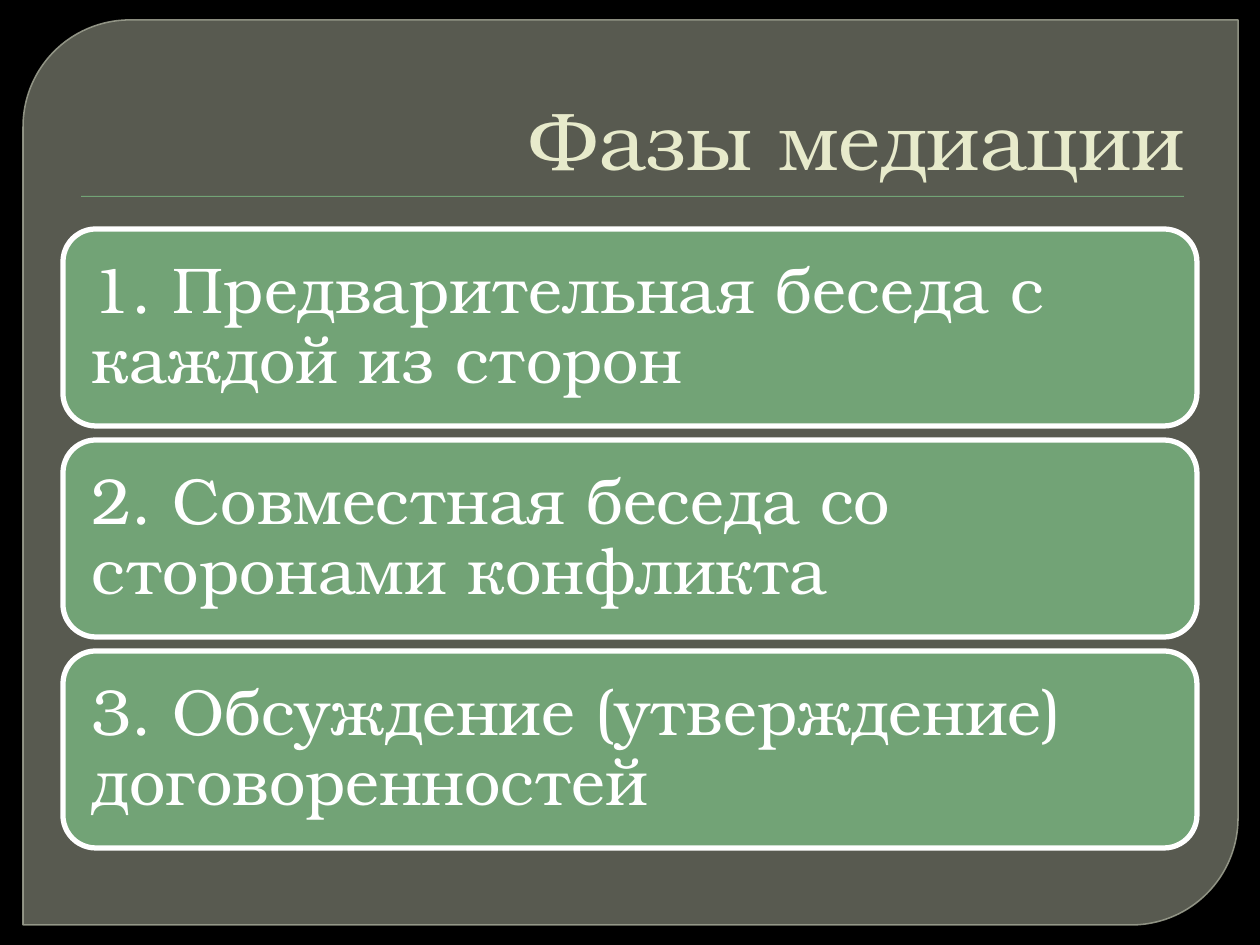
from dataclasses import dataclass

from lxml import etree
from pptx import Presentation
from pptx.dml.color import RGBColor
from pptx.enum.shapes import MSO_SHAPE
from pptx.enum.text import MSO_ANCHOR, PP_ALIGN
from pptx.oxml.ns import qn
from pptx.util import Emu, Pt

DIAGONAL = MSO_SHAPE.ROUND_2_DIAG_RECTANGLE
RECTANGLE = MSO_SHAPE.RECTANGLE
ROUNDED = MSO_SHAPE.ROUNDED_RECTANGLE
LEFT, RIGHT = PP_ALIGN.LEFT, PP_ALIGN.RIGHT
MIDDLE, BOTTOM = MSO_ANCHOR.MIDDLE, MSO_ANCHOR.BOTTOM


@dataclass(frozen=True)
class Theme:
    font: str = "TeX Gyre Bonum"
    title_size: int = 46
    phase_size: int = 37
    background: RGBColor = RGBColor(0x00, 0x00, 0x00)
    panel: RGBColor = RGBColor(0x88, 0x8B, 0x7B)
    panel_edge: RGBColor = RGBColor(0x9D, 0xA0, 0x90)
    accent: RGBColor = RGBColor(0x72, 0xA3, 0x76)
    title: RGBColor = RGBColor(0xE7, 0xEA, 0xCB)
    white: RGBColor = RGBColor(0xFF, 0xFF, 0xFF)


THEME = Theme()
PHASES = [
    "1. Предварительная беседа с каждой из сторон",
    "2. Совместная беседа со сторонами конфликта",
    "3. Обсуждение (утверждение) договоренностей",
]
PHASE_TOP, PHASE_HEIGHT, PHASE_PITCH = 229, 197, 211


def px(count):
    """Convert pixels, 126 to the inch, into EMU."""
    return Emu(round(count * 914400 / 126))


def add_filled(kind, box, fill):
    shape = slide.shapes.add_shape(kind, *map(px, box))
    shape.shadow.inherit = False
    shape.fill.solid()
    shape.fill.fore_color.rgb = fill
    return shape


prs = Presentation()
prs.slide_width, prs.slide_height = px(1260), px(945)
slide = prs.slides.add_slide(prs.slide_layouts[5])
slide.background.fill.solid()
slide.background.fill.fore_color.rgb = THEME.background

# Translucent panel and the rule under the title, both behind the title
panel = add_filled(DIAGONAL, (23, 20, 1215, 905), THEME.panel)
panel.adjustments[0] = 0.118
panel.adjustments[1] = 0
panel.line.color.rgb = THEME.panel_edge
panel.line.width = Pt(0.87)
for color, opacity in zip(panel.element.spPr.iter(qn("a:srgbClr")), (65, 88)):
    etree.SubElement(color, qn("a:alpha"), val=str(opacity * 1000))

rule = add_filled(RECTANGLE, (81, 196, 1103, 1), THEME.accent)
rule.line.fill.background()

title = slide.shapes.title
for backdrop in (panel, rule):
    title.element.addprevious(backdrop.element)
title.left, title.top, title.width, title.height = map(px, (63, 35, 1134, 158))
title.text_frame.text = "Фазы медиации"
title.text_frame.vertical_anchor = BOTTOM
heading = title.text_frame.paragraphs[0]
heading.alignment = RIGHT
heading.font.name = THEME.font
heading.font.size = Pt(THEME.title_size)
heading.font.color.rgb = THEME.title

# Mediation phases, stacked at an equal pitch
for index, wording in enumerate(PHASES):
    top = PHASE_TOP + index * PHASE_PITCH
    phase = add_filled(ROUNDED, (63, top, 1134, PHASE_HEIGHT), THEME.accent)
    phase.line.color.rgb = THEME.white
    phase.line.width = Pt(3)
    frame = phase.text_frame
    frame.word_wrap = True
    frame.vertical_anchor = MIDDLE
    frame.margin_left = frame.margin_right = px(19)
    frame.margin_top = frame.margin_bottom = px(19)
    frame.text = wording
    paragraph = frame.paragraphs[0]
    paragraph.alignment = LEFT
    paragraph.line_spacing = 0.9
    paragraph.font.name = THEME.font
    paragraph.font.size = Pt(THEME.phase_size)
    paragraph.font.color.rgb = THEME.white

prs.save("out.pptx")
